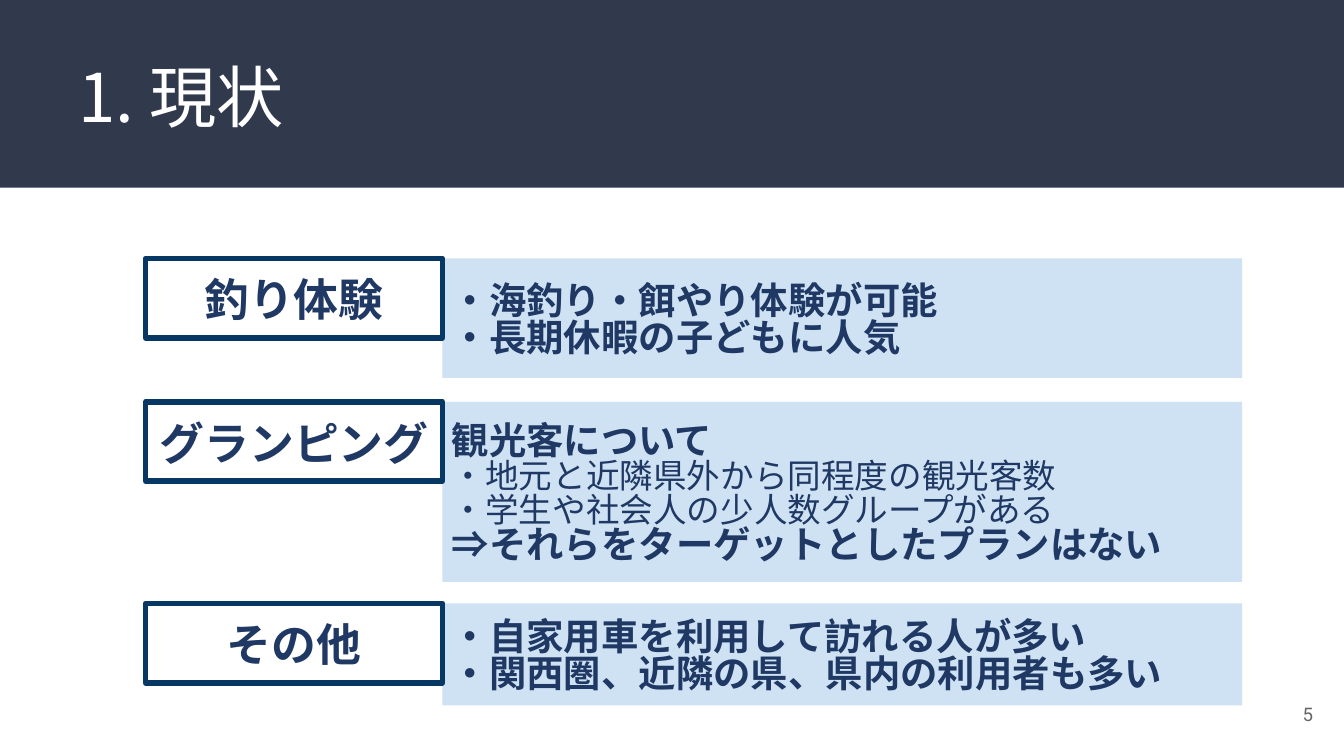
from dataclasses import dataclass

from lxml import etree
from pptx import Presentation
from pptx import util as u
from pptx.dml.color import RGBColor
from pptx.enum import shapes, text
from pptx.oxml import ns

Pt = u.Pt


@dataclass(frozen=True)
class Theme:
    banner: str = "31394D"
    white: str = "FFFFFF"
    panel: str = "CFE2F3"
    frame: str = "073763"
    ink: str = "1F3864"
    grey: str = "666666"
    font: str = "Noto Sans CJK JP"
    number_font: str = "Roboto"
    title: int = 36
    label: int = 24
    body: int = 20
    detail: int = 18
    number: int = 10


THEME = Theme()
LEFT, TOP, RIGHT, BOTTOM = range(4)

# Label, top, panel height, lines as (wording, is main point)
SECTIONS = [
    ("釣り体験", 138.5, 64, [
        ("・海釣り・餌やり体験が可能", True),
        ("・長期休暇の子どもに人気", True)]),
    ("グランピング", 215.3, 96.5, [
        ("観光客について", True),
        ("・地元と近隣県外から同程度の観光客数", False),
        ("・学生や社会人の少人数グループがある", False),
        ("⇒それらをターゲットとしたプランはない", True)]),
    ("その他", 323.3, 54.7, [
        ("・自家用車を利用して訪れる人が多い", True),
        ("・関西圏、近隣の県、県内の利用者も多い", True)]),
]


def color(value):
    return RGBColor.from_string(value)


def set_frame(frame, insets, anchor):
    frame.word_wrap = True
    frame.auto_size = text.MSO_AUTO_SIZE.NONE
    frame.vertical_anchor = anchor
    frame.margin_left, frame.margin_top = Pt(insets[LEFT]), Pt(insets[TOP])
    frame.margin_right, frame.margin_bottom = Pt(insets[RIGHT]), Pt(insets[BOTTOM])


def add_run(para, wording, size, ink, bold=False, font=THEME.font):
    span = para.add_run()
    span.text = wording
    span.font.size = Pt(size)
    span.font.bold = bold
    span.font.name = font
    span.font.color.rgb = color(ink)
    east_asian = etree.SubElement(span.font._element, ns.qn("a:ea"))
    east_asian.set("typeface", font)


def add_box(page, area, fill=None, line=None):
    box = page.shapes.add_shape(shapes.MSO_SHAPE.RECTANGLE, *map(Pt, area))
    box.shadow.inherit = False
    if fill:
        box.fill.solid()
        box.fill.fore_color.rgb = color(fill)
    else:
        box.fill.background()
    if line:
        box.line.color.rgb = color(line)
        box.line.width = Pt(3)
    else:
        box.line.fill.background()
    return box


def add_header(page, area, wording):
    left, top, width, height = area
    banner = add_box(page, area, fill=THEME.banner)
    # The banner lies behind the title
    page.shapes._spTree.insert(2, banner._element)
    title = page.shapes.title
    title.left, title.top = Pt(left + 34.6), Pt(top + 27.4)
    title.width, title.height = Pt(width - 69.2), Pt(height - 31)
    set_frame(title.text_frame, (7.2,) * 4, text.MSO_ANCHOR.TOP)
    para = title.text_frame.paragraphs[0]
    para.alignment = text.PP_ALIGN.LEFT
    para.line_spacing = 0.9
    add_run(para, wording, THEME.title, THEME.white)


def add_section(page, area, label, lines):
    left, top, width, height = area
    label_width, label_height = 159, 42.5
    # Panel with the points
    panel = add_box(page, (left + label_width, top, width - label_width, height),
                    fill=THEME.panel)
    frame = panel.text_frame
    set_frame(frame, (5, 6.5, 5, 2.9), text.MSO_ANCHOR.MIDDLE)
    for index, (wording, main) in enumerate(lines):
        para = frame.add_paragraph() if index else frame.paragraphs[0]
        para.alignment = text.PP_ALIGN.LEFT
        para.line_spacing = 0.83
        add_run(para, wording, THEME.body if main else THEME.detail,
                THEME.ink, bold=main)
    # Framed label
    tag = add_box(page, (left, top, label_width, label_height), line=THEME.frame)
    set_frame(tag.text_frame, (5, 8.6, 5, 2.9), text.MSO_ANCHOR.MIDDLE)
    para = tag.text_frame.paragraphs[0]
    para.alignment = text.PP_ALIGN.CENTER
    para.line_spacing = 0.83
    add_run(para, label, THEME.label, THEME.ink, bold=True)


def add_page_number(page, area, wording):
    box = page.shapes.add_textbox(*map(Pt, area))
    set_frame(box.text_frame, (7.2,) * 4, text.MSO_ANCHOR.MIDDLE)
    para = box.text_frame.paragraphs[0]
    para.alignment = text.PP_ALIGN.RIGHT
    add_run(para, wording, THEME.number, THEME.grey, font=THEME.number_font)


def main():
    deck = Presentation()
    deck.slide_width, deck.slide_height = Pt(720), Pt(405)
    page = deck.slides.add_slide(deck.slide_layouts.get_by_name("Title Only"))
    add_header(page, (0, 0, 720, 100.6), "1. 現状")
    for label, top, height, lines in SECTIONS:
        add_section(page, (78, top, 587.4, height), label, lines)
    add_page_number(page, (667.4, 367.2, 43.2, 31), "5")
    deck.save("out.pptx")


if __name__ == "__main__":
    main()
